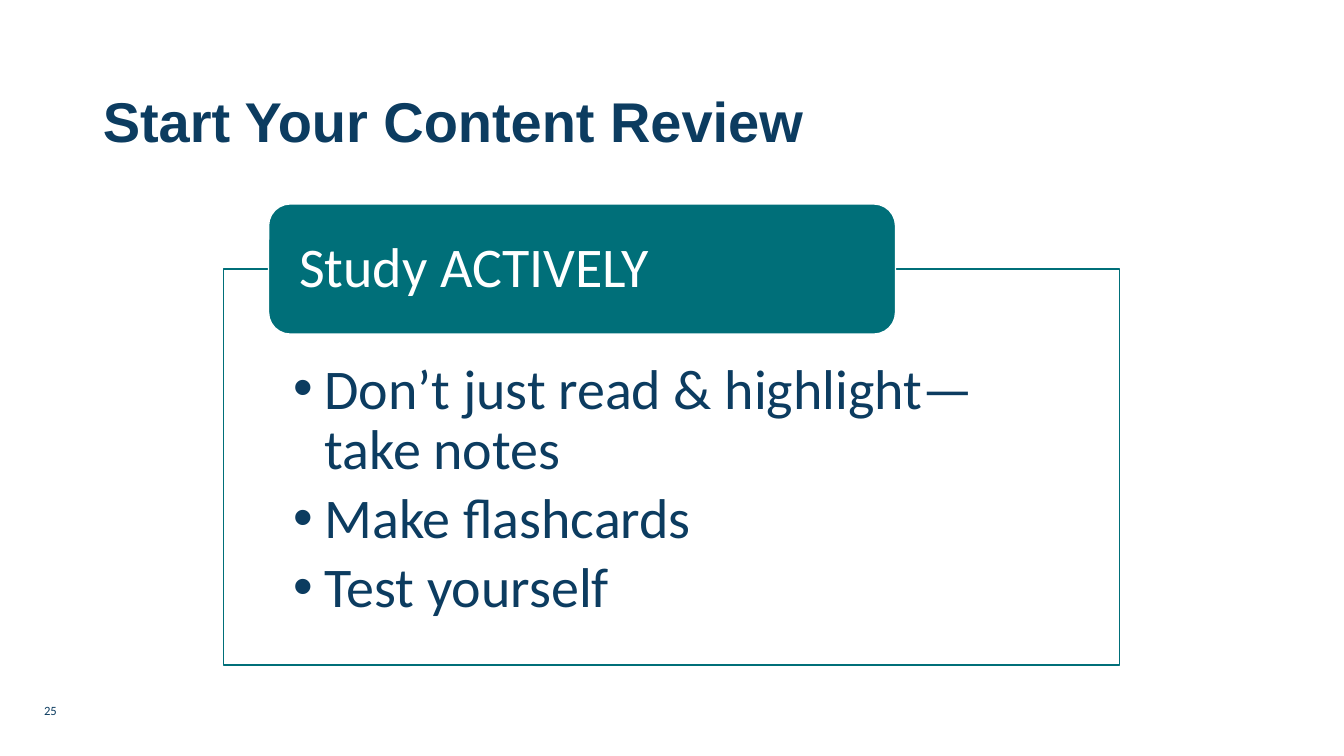
from pptx import Presentation, util as u
from pptx.dml.color import RGBColor
from pptx.enum import shapes, text

# Content
TITLE = "Start Your Content Review"
HEAD = "Study ACTIVELY"
TIPS = [
    "Don’t just read & highlight—take notes",
    "Make flashcards",
    "Test yourself",
]
PAGE = "25"
HEX = {"navy": "0C3C60", "teal": "006F79", "white": "FFFFFF"}

# Places in cm: left, top, width, height
WIDE, HIGH = 33.87, 19.05
TITLE_BOX = (2.34, 1.88, 29.21, 2.49)
CARD = (5.64, 6.78, 22.58, 9.98)
TAB_W, TAB_H = 15.8, 3.28
TAB = (CARD[0] + CARD[2] / 20, CARD[1] - TAB_H / 2, TAB_W, TAB_H)
PAGE_BOX = (0.86, 17.58, 5.72, 0.58)


def color(name):
    return RGBColor.from_string(HEX[name])


def place(shape, box):
    shape.left, shape.top, shape.width, shape.height = map(u.Cm, box)


def paint(shape, fill, line):
    shape.fill.solid()
    shape.fill.fore_color.rgb = color(fill)
    shape.line.color.rgb = color(line)
    shape.line.width = u.Pt(1)


def write(shape, lines, size=40, face="Calibri", ink="navy", bold=False,
          anchor=text.MSO_ANCHOR.TOP, pads=(0.25, 0.13, 0.25, 0.13),
          lead=0.9, after=0, hang=0):
    frame = shape.text_frame
    frame.word_wrap = True
    frame.auto_size = text.MSO_AUTO_SIZE.NONE
    frame.vertical_anchor = anchor
    (frame.margin_left, frame.margin_top,
     frame.margin_right, frame.margin_bottom) = map(u.Cm, pads)
    frame.text = "\n".join(lines)
    for para in frame.paragraphs:
        props = para._p.get_or_add_pPr()
        props.set("marL", str(u.Cm(hang)))
        props.set("indent", str(-u.Cm(hang)))
        para.alignment = text.PP_ALIGN.LEFT
        para.line_spacing = lead
        para.space_before = u.Pt(0)
        para.space_after = u.Pt(after)
        font = para.font
        font.name, font.size, font.bold = face, u.Pt(size), bold
        font.color.rgb = color(ink)


deck = Presentation()
deck.slide_width, deck.slide_height = u.Cm(WIDE), u.Cm(HIGH)
slide = deck.slides.add_slide(deck.slide_layouts[1])

# Title
title = slide.shapes.title
place(title, TITLE_BOX)
write(title, [TITLE], face="Arial", bold=True, anchor=text.MSO_ANCHOR.MIDDLE)

# Framed list
card = slide.placeholders[1]
place(card, CARD)
paint(card, "white", "teal")
write(card, TIPS, pads=(1.75, 2.31, 1.75, 0.79), after=6, hang=0.79)

# Heading tab on the frame's top edge
tab = slide.shapes.add_shape(shapes.MSO_SHAPE.ROUNDED_RECTANGLE,
                             *map(u.Cm, TAB))
tab.shadow.inherit = False
paint(tab, "teal", "white")
write(tab, [HEAD], ink="white", anchor=text.MSO_ANCHOR.MIDDLE,
      pads=(0.61, 0, 0.61, 0))

# Page number
page = slide.shapes.add_textbox(*map(u.Cm, PAGE_BOX))
write(page, [PAGE], size=9, lead=1.0)

deck.save("out.pptx")
